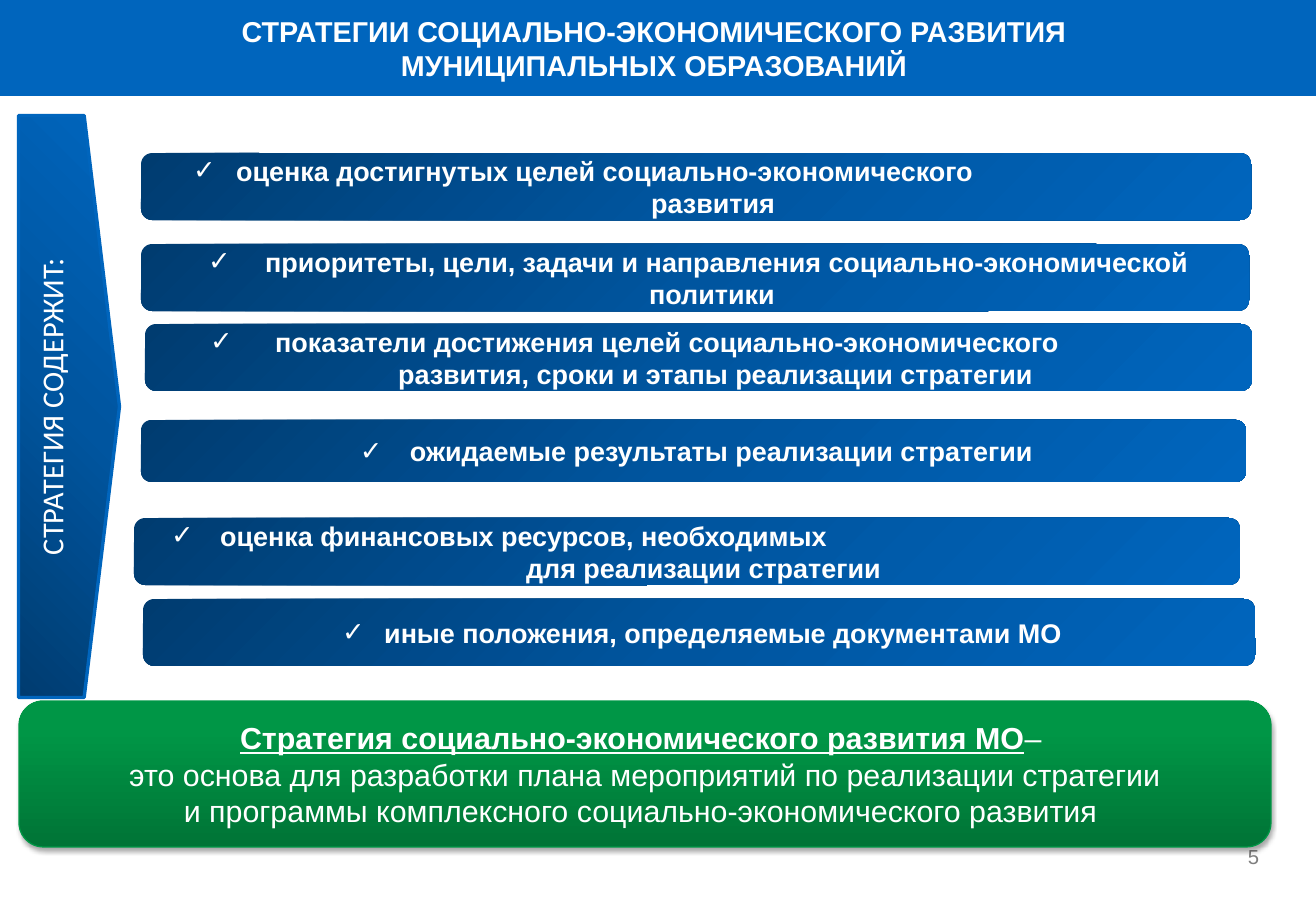
"""Build the slide on municipal socio-economic development strategies."""
from lxml.etree import SubElement
from pptx import Presentation
from pptx.dml.color import RGBColor
from pptx.enum.shapes import MSO_SHAPE as SHAPE
from pptx.enum.text import MSO_ANCHOR as ANCHOR, PP_ALIGN as ALIGN
from pptx.oxml.ns import qn
from pptx.util import Emu, Pt

TITLE = ["СТРАТЕГИИ СОЦИАЛЬНО-ЭКОНОМИЧЕСКОГО РАЗВИТИЯ ",
         "МУНИЦИПАЛЬНЫХ ОБРАЗОВАНИЙ "]
ARROW = "СТРАТЕГИЯ СОДЕРЖИТ:"
# bar box, check mark x, then (text x, line) pairs
BARS = [
    ((141, 153, 1110, 67), 190, [(233, "оценка достигнутых целей социально-экономического"),
                                 (648, "развития")]),
    ((141, 244, 1108, 67), 205, [(262, "приоритеты, цели, задачи и направления социально-экономической"),
                                 (646, "политики")]),
    ((145, 324, 1107, 67), 207, [(272, "показатели достижения целей социально-экономического"),
                                 (395, "развития, сроки и этапы реализации стратегии")]),
    ((141, 420, 1105, 62), 357, [(407, "ожидаемые результаты реализации стратегии")]),
    ((134, 518, 1106, 67), 168, [(217, "оценка финансовых ресурсов, необходимых"),
                                 (523, "для реализации стратегии")]),
    ((143, 599, 1112, 67), 339, [(381, "иные положения, определяемые документами МО")]),
]
SUMMARY_HEAD = "Стратегия социально-экономического развития МО"
SUMMARY = ["это основа для разработки плана мероприятий по реализации стратегии",
           "и программы комплексного социально-экономического развития "]
PAGE = "5"

COLORS = {"blue": "0065BD", "mid": "00559F", "navy": "003C70", "white": "FFFFFF",
          "green": "009846", "leaf": "009746", "grass": "009646", "forest": "007436",
          "grey": "7F7F7F", "black": "000000"}
BLUE_STOPS = [(0, "navy"), (50, "mid"), (100, "blue")]
GREEN_STOPS = [(0, "forest"), (80, "grass"), (100, "leaf")]
INSET = 12


def px(n):
    return Emu(round(n * 914400 / 121.5))


def rgb(name):
    return RGBColor.from_string(COLORS[name])


def add_box(s, kind, box, fill=None, stops=None, angle=0, line=None, width=1):
    sp = s.shapes.add_shape(kind, *map(px, box))
    sp.shadow.inherit = False
    if stops:
        sp.fill.gradient()
        sp.fill.gradient_angle = (360 - angle) % 360
        gs_list = sp._element.spPr.find(".//" + qn("a:gsLst"))
        for gs in list(gs_list):
            gs_list.remove(gs)
        for pos, name in stops:
            gs = SubElement(gs_list, qn("a:gs"), pos=str(pos * 1000))
            SubElement(gs, qn("a:srgbClr"), val=COLORS[name])
    else:
        sp.fill.solid()
        sp.fill.fore_color.rgb = rgb(fill)
    if line:
        sp.line.color.rgb = rgb(line)
        sp.line.width = Pt(width)
    else:
        sp.line.fill.background()
    sp.text_frame.word_wrap = True
    sp.text_frame.vertical_anchor = ANCHOR.MIDDLE
    return sp


def add_line(tf, first, align=ALIGN.CENTER):
    p = tf.paragraphs[0] if first else tf.add_paragraph()
    p.alignment = align
    return p


def add_run(p, text, size=16, font="Arial", color="white", bold=False, underline=False):
    r = p.add_run()
    r.text = text
    r.font.size, r.font.name = Pt(size), font
    r.font.bold, r.font.underline = bold, underline
    r.font.color.rgb = rgb(color)


def add_shadow(sp):
    effects = sp._element.spPr.find(qn("a:effectLst"))
    shadow = SubElement(effects, qn("a:outerShdw"), blurRad=str(Pt(3.1)), dist=str(Pt(1.8)),
                        dir="5400000", rotWithShape="0")
    clr = SubElement(shadow, qn("a:srgbClr"), val=COLORS["black"])
    SubElement(clr, qn("a:alpha"), val="35000")


def add_bar(s, box, check_x, lines):
    sp = add_box(s, SHAPE.ROUNDED_RECTANGLE, box, stops=BLUE_STOPS, angle=45)
    for i, (x, text) in enumerate(lines):
        p = add_line(sp.text_frame, i == 0, ALIGN.LEFT)
        pPr = p._p.get_or_add_pPr()
        pPr.set("marL", str(px(x - box[0] - INSET)))
        pPr.set("indent", str(px(check_x - x) if i == 0 else 0))
        if i == 0:
            SubElement(pPr, qn("a:buFont"), typeface="Arial")
            SubElement(pPr, qn("a:buChar"), char="✓")
        else:
            SubElement(pPr, qn("a:buNone"))
        add_run(p, text, bold=True)


def main():
    prs = Presentation()
    prs.slide_width, prs.slide_height = px(1316), px(911)
    s = prs.slides.add_slide(prs.slide_layouts[6])

    page = s.shapes.add_textbox(*map(px, (1196, 848, 63, 17)))
    tf = page.text_frame
    tf.margin_left = tf.margin_right = tf.margin_top = tf.margin_bottom = 0
    tf.word_wrap, tf.vertical_anchor = False, ANCHOR.MIDDLE
    add_run(add_line(tf, True, ALIGN.RIGHT), PAGE, size=12, color="grey")

    header = add_box(s, SHAPE.RECTANGLE, (0, 0, 1316, 96), fill="blue")
    for i, text in enumerate(TITLE):
        add_run(add_line(header.text_frame, i == 0), text, size=17, bold=True)

    for box, check_x, lines in BARS:
        add_bar(s, box, check_x, lines)

    arrow = add_box(s, SHAPE.DOWN_ARROW, (-222, 356, 582, 101), stops=BLUE_STOPS, angle=45,
                    line="blue", width=2)
    arrow.rotation = 270
    arrow.adjustments[0], arrow.adjustments[1] = 1, 0.35
    add_run(add_line(arrow.text_frame, True), ARROW, size=18, font="Calibri")

    summary = add_box(s, SHAPE.ROUNDED_RECTANGLE, (19, 701, 1252, 146), stops=GREEN_STOPS,
                      angle=270, line="green", width=0.75)
    add_shadow(summary)
    p = add_line(summary.text_frame, True)
    add_run(p, SUMMARY_HEAD, size=18, bold=True, underline=True)
    add_run(p, "– ", size=18)
    for text in SUMMARY:
        add_run(add_line(summary.text_frame, False), text, size=18)

    prs.save("out.pptx")


if __name__ == "__main__":
    main()
